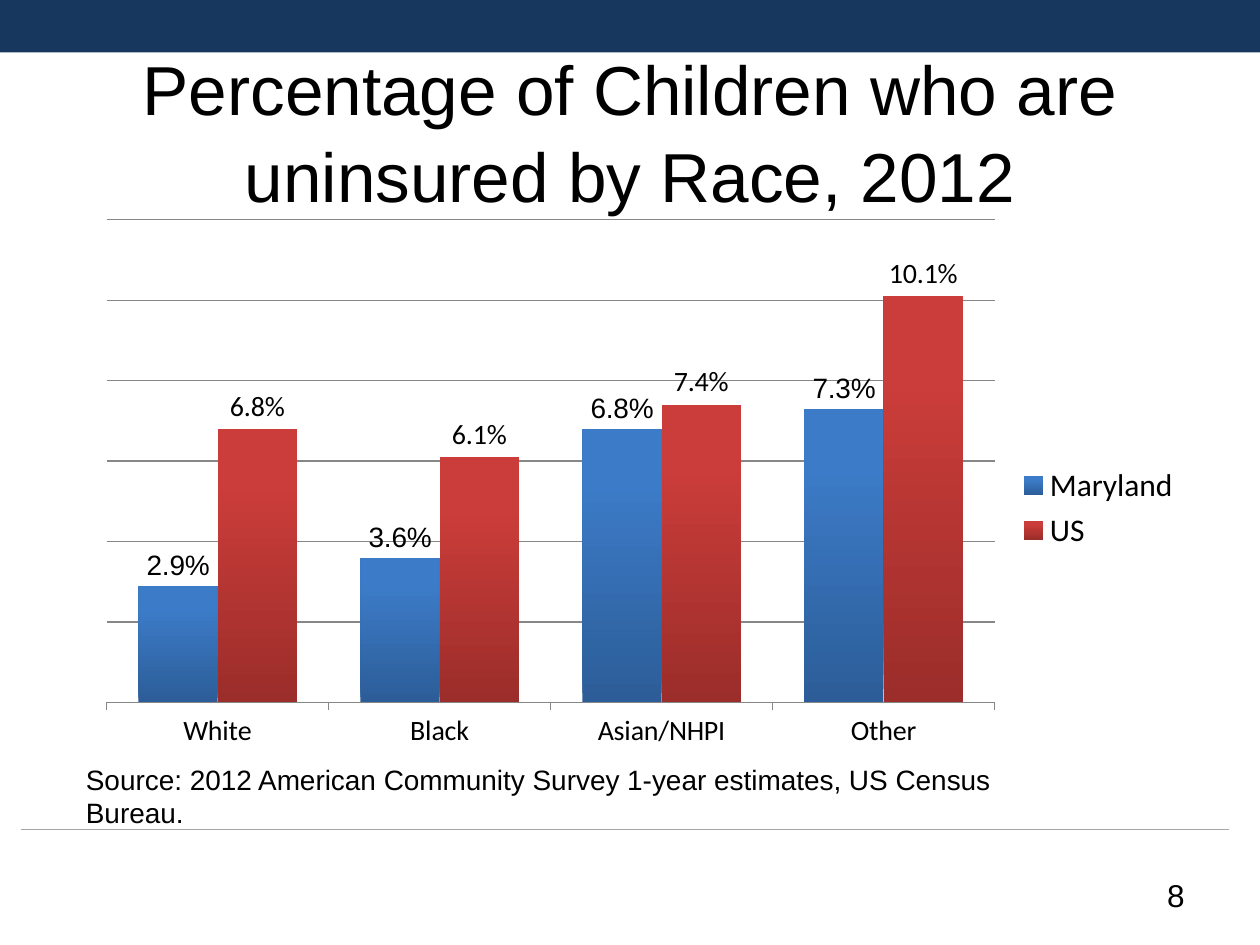
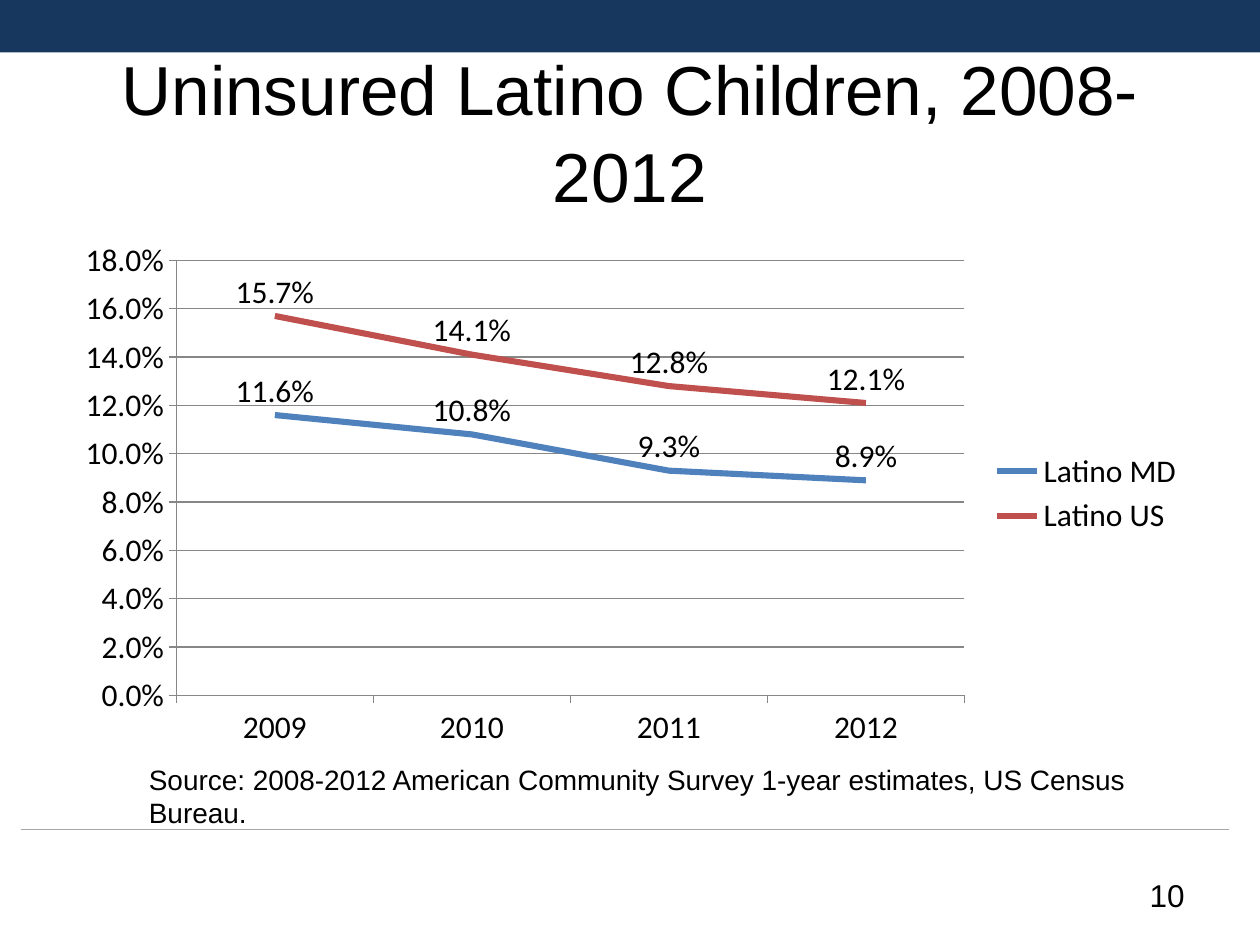
from lxml import etree
from pptx import Presentation
from pptx.chart import data
from pptx.dml import color
from pptx.enum import chart as charts, shapes, text
from pptx.oxml import ns
from pptx.util import Pt

COLORS = {
    "band": "17375E", "rule": "A6A6A6", "ink": "000000", "grid": "878787",
    "blue": "4F81BD", "blue_low": "2C5D98", "blue_high": "3C7BC7",
    "red": "C0504D", "red_low": "9B2D2A", "red_high": "CB3D3A",
}


def rgb(name):
    return color.RGBColor.from_string(COLORS[name])


class Deck:
    def __init__(self):
        self.prs = Presentation()
        self.prs.slide_width, self.prs.slide_height = Pt(720), Pt(540)
        self.slide = None

    def start(self, title, number):
        self.slide = self.prs.slides.add_slide(self.prs.slide_layouts[6])
        self.band(0, 0, 720, 30)
        self.rule(12, 474, 702)
        self.words(title, 36, 36, 648, 76, 39.6, text.PP_ALIGN.CENTER,
                   text.MSO_ANCHOR.MIDDLE, spacing=1.04)
        self.words(number, 516, 497, 168, 29, 18, text.PP_ALIGN.RIGHT,
                   text.MSO_ANCHOR.MIDDLE)

    def band(self, left, top, width, height):
        band = self.slide.shapes.add_shape(
            shapes.MSO_SHAPE.RECTANGLE, Pt(left), Pt(top), Pt(width), Pt(height))
        band.shadow.inherit = False
        band.fill.solid()
        band.fill.fore_color.rgb = rgb("band")
        band.line.fill.background()

    def rule(self, left, top, right):
        rule = self.slide.shapes.add_connector(
            shapes.MSO_CONNECTOR.STRAIGHT, Pt(left), Pt(top), Pt(right), Pt(top))
        rule.line.color.rgb = rgb("rule")
        rule.line.width = Pt(0.75)
        etree.SubElement(rule._element.spPr, ns.qn("a:effectLst"))

    def words(self, wording, left, top, width, height, size,
              align=text.PP_ALIGN.LEFT, anchor=text.MSO_ANCHOR.TOP, spacing=None):
        frame = self.slide.shapes.add_textbox(
            Pt(left), Pt(top), Pt(width), Pt(height)).text_frame
        frame.word_wrap = True
        frame.vertical_anchor = anchor
        frame.text = wording
        paragraph = frame.paragraphs[0]
        paragraph.alignment = align
        paragraph.line_spacing = spacing
        self.font(paragraph.runs[0].font, size, "Arial")

    def source(self, years, left, width):
        self.words(f"Source: {years} American Community Survey 1-year estimates, "
                   "US Census Bureau.", left, 432, width, 46, 16)

    def font(self, font, size, name="Calibri"):
        font.size, font.name = Pt(size), name
        font.color.rgb = rgb("ink")

    def chart(self, kind, box, categories, series, top_value):
        figures = data.CategoryChartData(number_format="0.0%")
        figures.categories = categories
        for name, values in series.items():
            figures.add_series(name, values)
        chart = self.slide.shapes.add_chart(kind, *map(Pt, box), figures).chart
        self.font(chart.font, 18)
        chart.has_title = False
        chart.has_legend = True
        chart.legend.position = charts.XL_LEGEND_POSITION.RIGHT
        chart.legend.include_in_layout = False
        chart.plots[0].vary_by_categories = False
        axis = chart.value_axis
        axis.minimum_scale, axis.maximum_scale, axis.major_unit = 0, top_value, 0.02
        axis.tick_labels.number_format = "0.0%"
        axis.tick_labels.number_format_is_linked = False
        axis.has_major_gridlines = True
        for line in (axis.major_gridlines.format.line, axis.format.line,
                     chart.category_axis.format.line):
            line.color.rgb = rgb("grid")
            line.width = Pt(0.75)
        return chart

    def place(self, part, index, **fractions):
        for old in part.findall(ns.qn("c:layout")):
            part.remove(old)
        layout = etree.Element(ns.qn("c:layout"))
        manual = etree.SubElement(layout, ns.qn("c:manualLayout"))
        if "w" in fractions:
            etree.SubElement(manual, ns.qn("c:layoutTarget")).set("val", "inner")
        for mode in ("xMode", "yMode"):
            etree.SubElement(manual, ns.qn(f"c:{mode}")).set("val", "edge")
        for side, fraction in fractions.items():
            etree.SubElement(manual, ns.qn(f"c:{side}")).set("val", str(fraction))
        part.insert(index, layout)

    def place_plot(self, chart, x, y, w, h):
        plot_area = chart._chartSpace.chart.plotArea
        self.place(plot_area, 0, x=x, y=y, w=w, h=h)

    def place_legend(self, chart, x, y):
        self.place(chart.legend._element, 1, x=x, y=y)

    def labels(self, series, position, size, name="Calibri"):
        labels = series.data_labels
        labels.show_value = True
        labels.number_format = "0.0%"
        labels.number_format_is_linked = False
        labels.position = position
        self.font(labels.font, size, name)

    def columns(self, box, categories, series, top_value):
        chart = self.chart(charts.XL_CHART_TYPE.COLUMN_CLUSTERED, box,
                           categories, series, top_value)
        chart.value_axis.visible = False
        self.font(chart.category_axis.tick_labels.font, 16)
        plot = chart.plots[0]
        plot.gap_width, plot.overlap = 80, 0
        for bars, hue, face in zip(plot.series, ("blue", "red"), ("Arial", "Calibri")):
            fill = bars.format.fill
            fill.gradient()
            fill.gradient_angle = 90
            for stop, shade, position in zip(fill.gradient_stops, ("low", "high"), (0, 0.8)):
                stop.color.rgb = rgb(f"{hue}_{shade}")
                stop.position = position
            self.labels(bars, charts.XL_LABEL_POSITION.OUTSIDE_END, 16, face)
        return chart

    def lines(self, box, categories, series, top_value):
        chart = self.chart(charts.XL_CHART_TYPE.LINE, box, categories, series, top_value)
        for trend, hue in zip(chart.plots[0].series, ("blue", "red")):
            trend.smooth = False
            trend.marker.style = charts.XL_MARKER_STYLE.NONE
            trend.format.line.color.rgb = rgb(hue)
            trend.format.line.width = Pt(3.5)
            self.labels(trend, charts.XL_LABEL_POSITION.ABOVE, 18)
        return chart


def main():
    deck = Deck()

    deck.start("Percentage of Children who are uninsured by Race, 2012", "8")
    by_race = deck.columns(
        (48, 114, 648, 324), ["White", "Black", "Asian/NHPI", "Other"],
        {"Maryland": (0.029, 0.036, 0.068, 0.073), "US": (0.068, 0.061, 0.074, 0.101)},
        0.12)
    deck.place_plot(by_race, 0.02, 0.036, 0.783, 0.851)
    deck.place_legend(by_race, 0.82, 0.46)
    deck.source("2012", 42, 552)

    deck.start("Uninsured Latino Children, 2008-2012", "10")
    by_year = deck.lines(
        (36, 132, 648, 300), ["2009", "2010", "2011", "2012"],
        {"Latino MD": (0.116, 0.108, 0.093, 0.089),
         "Latino US": (0.157, 0.141, 0.128, 0.121)},
        0.18)
    deck.place_plot(by_year, 0.1, 0.056, 0.695, 0.829)
    deck.source("2008-2012", 78, 575)

    deck.prs.save("out.pptx")


if __name__ == "__main__":
    main()
